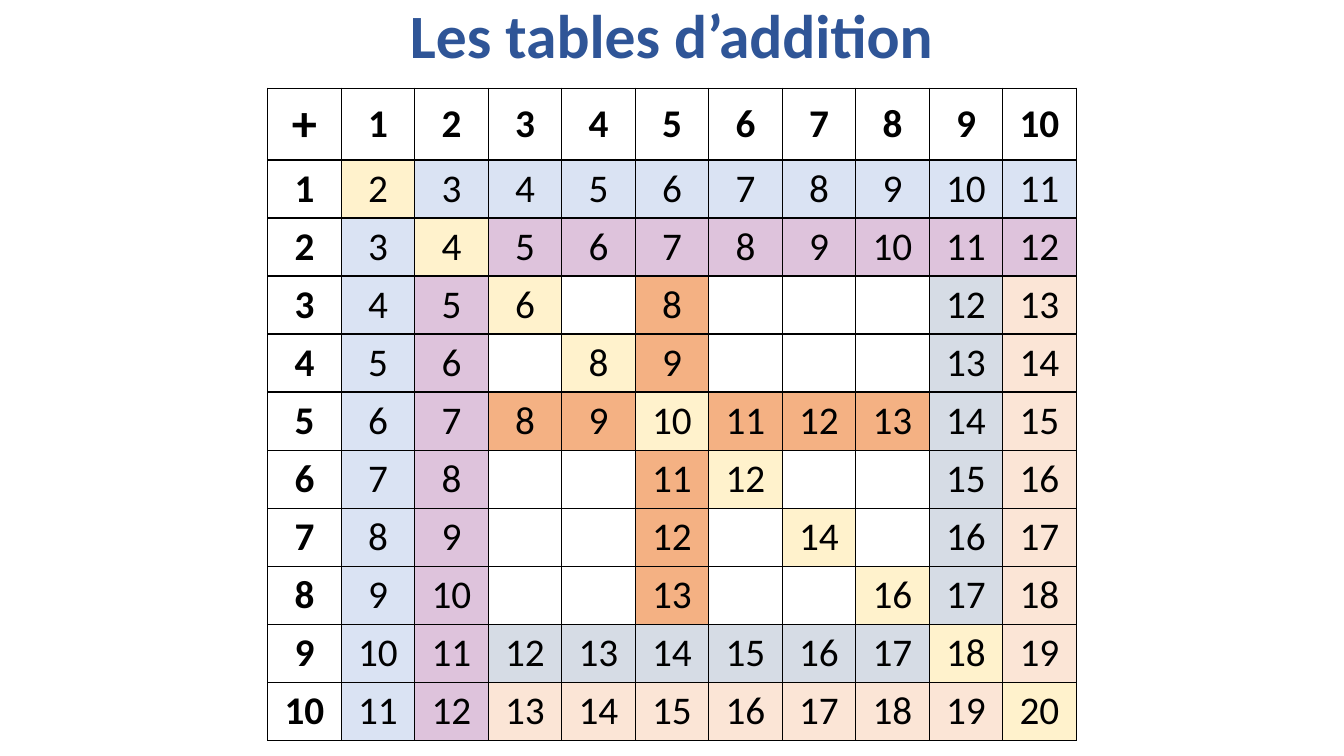
"""Build a slide with the addition tables from 1 to 10."""
from dataclasses import dataclass
from itertools import product
from typing import Any, Optional

from lxml import etree
from pptx import Presentation
from pptx import util as u
from pptx.dml.color import RGBColor
from pptx.enum import text
from pptx.oxml.ns import qn

SCALE = 9525
SLIDE_WIDTH, SLIDE_HEIGHT = 1280, 720
TABLE_LEFT, TABLE_TOP = 255, 84
COLUMN_WIDTH, HEADER_HEIGHT, ROW_HEIGHT = 70, 67, 55
COUNT = 11

BLACK = RGBColor(0x00, 0x00, 0x00)
WHITE = RGBColor(0xFF, 0xFF, 0xFF)
TITLE_BLUE = RGBColor(0x2F, 0x55, 0x97)
YELLOW = RGBColor(0xFF, 0xF2, 0xCC)
BLUE = RGBColor(0xDA, 0xE3, 0xF3)
PURPLE = RGBColor(0xDE, 0xC3, 0xDC)
PEACH = RGBColor(0xFB, 0xE5, 0xD6)
GREY = RGBColor(0xD6, 0xDC, 0xE5)
ORANGE = RGBColor(0xF4, 0xB1, 0x83)
BAND_COLOURS = {1: BLUE, 2: PURPLE, 10: PEACH, 9: GREY, 5: ORANGE}


@dataclass(frozen=True)
class Entry:
    """Content and look of one table cell."""
    words: str
    fill: Optional[RGBColor]
    bold: bool = False
    size: int = 28


def px(length: int) -> u.Emu:
    """Turn pixels into EMU."""
    return u.Emu(length * SCALE)


def entry_at(row: int, column: int) -> Entry:
    """Work out the entry for a row number and a column number."""
    if row == column == 0:
        return Entry("+", WHITE, True, 36)
    if row == 0 or column == 0:
        return Entry(str(row + column), WHITE, True)
    if row == column:
        return Entry(str(row + column), YELLOW)
    for number, colour in BAND_COLOURS.items():
        if number in (row, column):
            return Entry(str(row + column), colour)
    return Entry("", None)


def write(frame: Any, words: str, size: int, bold: bool, colour: RGBColor) -> Any:
    """Write one centred paragraph and return it."""
    para = frame.paragraphs[0]
    para.alignment = text.PP_ALIGN.CENTER
    span = para.add_run()
    span.text = words
    font_values = {"name": "Calibri", "size": u.Pt(size), "bold": bold}
    for name, value in font_values.items():
        setattr(span.font, name, value)
    span.font.color.rgb = colour
    return para


def add_borders(cell: Any) -> None:
    """Give a cell a thin black line on each side."""
    properties = cell._tc.get_or_add_tcPr()
    for side in ("lnL", "lnR", "lnT", "lnB"):
        line = etree.SubElement(properties, qn(f"a:{side}"), w=str(u.Pt(1)))
        fill = etree.SubElement(line, qn("a:solidFill"))
        etree.SubElement(fill, qn("a:srgbClr"), val=str(BLACK))


def draw_entry(cell: Any, entry: Entry) -> None:
    """Draw one entry in its table cell."""
    cell.vertical_anchor = text.MSO_ANCHOR.MIDDLE
    add_borders(cell)
    if entry.fill is None:
        cell.fill.background()
    else:
        cell.fill.solid()
        cell.fill.fore_color.rgb = entry.fill
    if entry.words:
        write(cell.text_frame, entry.words, entry.size, entry.bold, BLACK)


def draw_table(page: Any) -> None:
    """Draw the grid of sums."""
    height = HEADER_HEIGHT + (COUNT - 1) * ROW_HEIGHT
    table = page.shapes.add_table(
        COUNT, COUNT, px(TABLE_LEFT), px(TABLE_TOP),
        px(COUNT * COLUMN_WIDTH), px(height)).table
    table.horz_banding = False
    for column in table.columns:
        column.width = px(COLUMN_WIDTH)
    for index, row in enumerate(table.rows):
        row.height = px(ROW_HEIGHT if index else HEADER_HEIGHT)
    for row, column in product(range(COUNT), repeat=2):
        draw_entry(table.cell(row, column), entry_at(row, column))


def draw_title(page: Any) -> None:
    """Draw the title above the table."""
    box = page.shapes.add_textbox(px(88), px(-11), px(1104), px(95))
    frame_values = {"word_wrap": True, "vertical_anchor": text.MSO_ANCHOR.MIDDLE}
    for name, value in frame_values.items():
        setattr(box.text_frame, name, value)
    para = write(box.text_frame, "Les tables d’addition", 44, True, TITLE_BLUE)
    para.line_spacing = 0.9


def main() -> None:
    """Build and save the deck."""
    deck = Presentation()
    deck.slide_width, deck.slide_height = px(SLIDE_WIDTH), px(SLIDE_HEIGHT)
    page = deck.slides.add_slide(deck.slide_layouts[6])
    draw_table(page)
    draw_title(page)
    deck.save("out.pptx")


if __name__ == "__main__":
    main()
